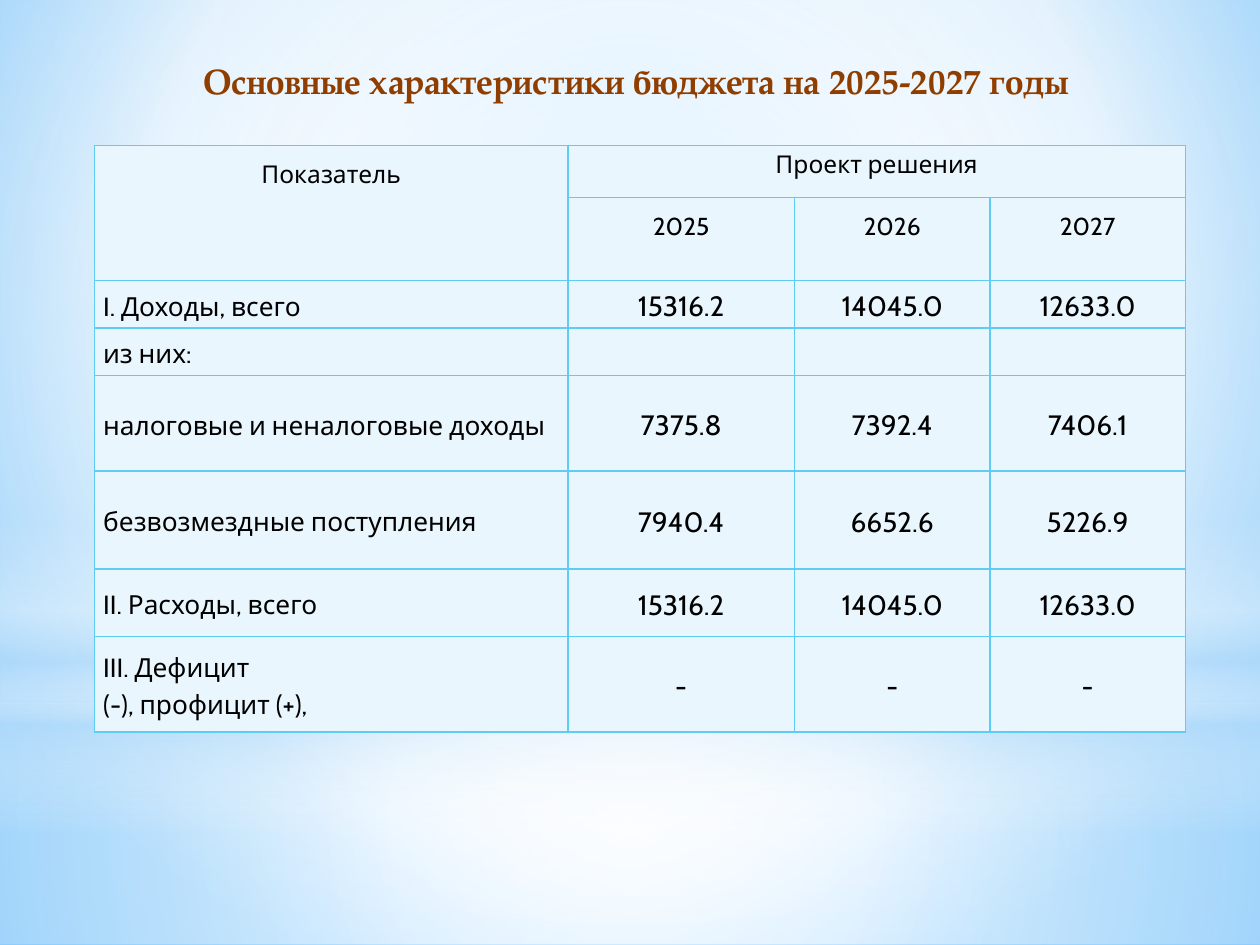
from lxml import etree
from pptx import Presentation
from pptx.dml.color import RGBColor
from pptx.enum.shapes import MSO_SHAPE
from pptx.enum.text import MSO_ANCHOR, PP_ALIGN
from pptx.oxml.ns import qn
from pptx.util import Pt

RECT, OVAL = MSO_SHAPE.RECTANGLE, MSO_SHAPE.OVAL
LEFT, CENTER = PP_ALIGN.LEFT, PP_ALIGN.CENTER
TOP, MIDDLE = MSO_ANCHOR.TOP, MSO_ANCHOR.MIDDLE

BROWN = RGBColor(0x90, 0x3E, 0x00)
BLACK = RGBColor(0, 0, 0)
PALE = RGBColor(0xEA, 0xF6, 0xFD)
CYAN = RGBColor(0x5E, 0xCC, 0xF3)
WHITE = RGBColor(0xFF, 0xFF, 0xFF)
MIST = RGBColor(0xB4, 0xDC, 0xFA)
SKY = RGBColor(0x9E, 0xD5, 0xFF)
BLUE = RGBColor(0x5B, 0xB9, 0xFF)

# Content
TITLE = "Основные характеристики бюджета на 2025-2027 годы "
ROWS = [
    ("Показатель", "Проект решения", "", ""),
    ("", "2025", "2026", "2027"),
    ("I. Доходы, всего", "15316.2", "14045.0", "12633.0"),
    ("из них:", "", "", ""),
    ("налоговые и неналоговые доходы", "7375.8", "7392.4", "7406.1"),
    ("безвозмездные поступления", "7940.4", "6652.6", "5226.9"),
    ("II. Расходы, всего", "15316.2", "14045.0", "12633.0"),
    ("III. Дефицит\n(-), профицит (+),", "-", "-", "-"),
]
COL_WIDTHS = (270.5, 129.5, 111.7, 111.7)
ROW_HEIGHTS = (29.8, 47.5, 27.2, 27.2, 54.5, 56, 38.6, 54.5)
HEADER_ROWS = 2

# Gradients: stops (position %, colour, opacity %) and focus (l, t, r, b) or None
CENTRE = (50, 50, 50, 50)
BACKGROUND = ([(0, SKY, 100), (60, WHITE, 100), (100, BLUE, 100)], (20, 10, 20, 60))
BACKDROP = [
    (RECT, (0, 402, 720, 138),
     [(0, WHITE, 91), (37, WHITE, 76), (100, MIST, 79)], CENTRE),
    (RECT, (0, 0, 720, 402),
     [(0, WHITE, 89), (48, WHITE, 62), (100, MIST, 79)], CENTRE),
    (RECT, (0, 297, 720, 180),
     [(0, WHITE, 0), (29, WHITE, 30), (45, MIST, 40), (55, WHITE, 26),
      (65, MIST, 60), (100, WHITE, 0)], None),
    (OVAL, (0, 126, 720, 402), [(0, WHITE, 100), (56, WHITE, 0)], CENTRE),
]


def set_gradient(fill, parent, stops, focus):
    fill.gradient()
    grad = parent.find(qn("a:gradFill"))
    for child in list(grad):
        grad.remove(child)
    stop_list = etree.SubElement(grad, qn("a:gsLst"))
    for pos, color, opacity in stops:
        gs = etree.SubElement(stop_list, qn("a:gs"), pos=str(pos * 1000))
        clr = etree.SubElement(gs, qn("a:srgbClr"), val=str(color))
        if opacity < 100:
            etree.SubElement(clr, qn("a:alpha"), val=str(opacity * 1000))
    if focus:
        circle = etree.SubElement(grad, qn("a:path"), path="circle")
        rect = etree.SubElement(circle, qn("a:fillToRect"))
        for side, value in zip("ltrb", focus):
            rect.set(side, str(value * 1000))
    else:
        etree.SubElement(grad, qn("a:lin"), ang="5400000", scaled="0")


def set_borders(cell):
    tc_pr = cell._tc.get_or_add_tcPr()
    for i, side in enumerate("LRTB"):
        ln = etree.Element(qn(f"a:ln{side}"), w=str(Pt(1)))
        fill = etree.SubElement(ln, qn("a:solidFill"))
        etree.SubElement(fill, qn("a:srgbClr"), val=str(CYAN))
        tc_pr.insert(i, ln)


def format_cell(cell, text, row, col):
    header = row < HEADER_ROWS
    cell.text = text
    cell.fill.solid()
    cell.fill.fore_color.rgb = PALE
    cell.vertical_anchor = TOP if header else MIDDLE
    cell.margin_left = cell.margin_right = Pt(5)
    cell.margin_top = cell.margin_bottom = 0
    set_borders(cell)
    for p in cell.text_frame.paragraphs:
        p.alignment = CENTER if header or col else LEFT
        p.line_spacing = 1.5 if header and (row or not col) else 1.15
        p.font.name = "Cabin"
        p.font.size = Pt(14 if header else 16 if col else 15)
        p.font.color.rgb = BLACK


prs = Presentation()
prs.slide_width, prs.slide_height = Pt(720), Pt(540)
slide = prs.slides.add_slide(prs.slide_layouts[5])

# Background and soft light shapes
fill = slide.background.fill
fill.solid()
set_gradient(fill, slide._element.find(".//" + qn("p:bgPr")), *BACKGROUND)
for kind, box, stops, focus in BACKDROP:
    sp = slide.shapes.add_shape(kind, *map(Pt, box))
    sp.shadow.inherit = False
    sp.line.fill.background()
    set_gradient(sp.fill, sp._element.spPr, stops, focus)

# Title, brought in front of the backdrop
title = slide.shapes.title
slide.shapes._spTree.append(title._element)
title.left, title.top, title.width, title.height = Pt(24), Pt(9.5), Pt(684), Pt(73.5)
tf = title.text_frame
tf.text = TITLE
tf.vertical_anchor = MIDDLE
p = tf.paragraphs[0]
p.alignment = CENTER
p.font.name = "TeX Gyre Pagella"
p.font.size = Pt(20)
p.font.bold = True
p.font.color.rgb = BROWN

# Budget table
table = slide.shapes.add_table(
    len(ROWS), len(COL_WIDTHS), Pt(54), Pt(83),
    Pt(sum(COL_WIDTHS)), Pt(sum(ROW_HEIGHTS))).table
table.first_row = table.horz_banding = False
for column, width in zip(table.columns, COL_WIDTHS):
    column.width = Pt(width)
for row, height in zip(table.rows, ROW_HEIGHTS):
    row.height = Pt(height)
for r, values in enumerate(ROWS):
    for c, text in enumerate(values):
        format_cell(table.cell(r, c), text, r, c)
table.cell(0, 0).merge(table.cell(1, 0))
table.cell(0, 1).merge(table.cell(0, 3))

prs.save("out.pptx")
